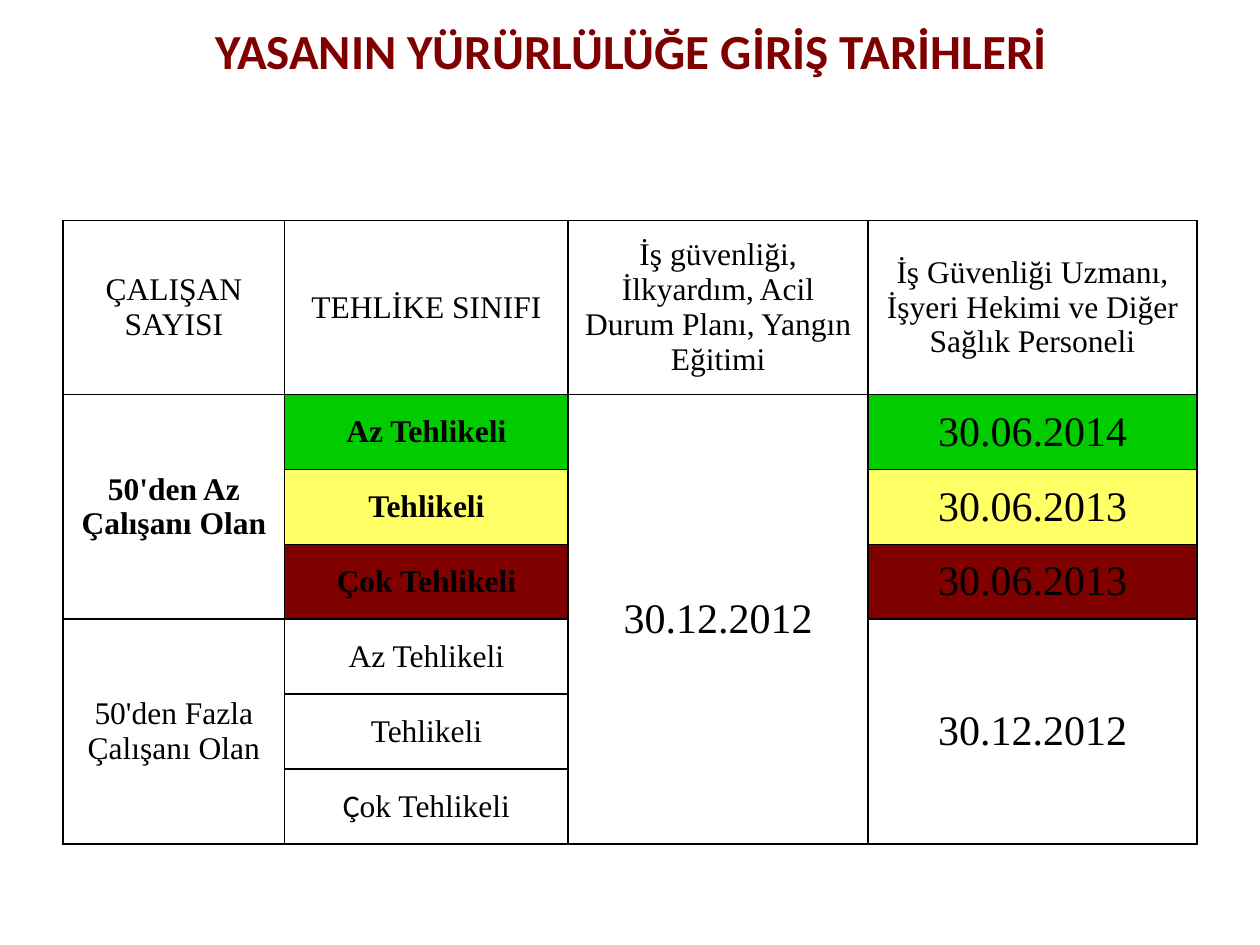
from lxml.etree import SubElement
from pptx import Presentation
from pptx.dml.color import RGBColor
from pptx.enum.text import MSO_ANCHOR, PP_ALIGN
from pptx.oxml.ns import qn
from pptx.util import Inches, Pt

COLORS = {"black": "000000", "maroon": "800000", "green": "00CC00", "yellow": "FFFF66"}
HEADING_FONT = "Calibri"
TABLE_FONT = "Times New Roman"
LABEL_SIZE, DATE_SIZE = 18, 24

TITLE = "YASANIN YÜRÜRLÜLÜĞE GİRİŞ TARİHLERİ"
HEADERS = [
    "ÇALIŞAN SAYISI",
    "TEHLİKE SINIFI",
    "İş güvenliği, İlkyardım, Acil Durum Planı, Yangın Eğitimi",
    "İş Güvenliği Uzmanı, İşyeri Hekimi ve Diğer Sağlık Personeli",
]
SMALL_WORKPLACES = "50'den Az Çalışanı Olan"
LARGE_WORKPLACES = "50'den Fazla Çalışanı Olan"
COMMON_DATE = "30.12.2012"
HAZARDS = [
    ("Az Tehlikeli", "30.06.2014", "green"),
    ("Tehlikeli", "30.06.2013", "yellow"),
    ("Çok Tehlikeli", "30.06.2013", "maroon"),
]
COLUMN_WIDTHS = [1.76, 2.25, 2.38, 2.61]
HEADER_HEIGHT, ROW_HEIGHT = 1.38, 0.595


def rgb(name):
    return RGBColor.from_string(COLORS[name])


def write(frame, runs, size, bold, color="black"):
    frame.word_wrap = True
    frame.vertical_anchor = MSO_ANCHOR.MIDDLE
    paragraph = frame.paragraphs[0]
    paragraph.alignment = PP_ALIGN.CENTER
    for text, font_name in runs:
        run = paragraph.add_run()
        run.text = text
        run.font.name = font_name
        run.font.size = Pt(size)
        run.font.bold = bold
        run.font.color.rgb = rgb(color)


def draw_borders(cell):
    properties = cell._tc.get_or_add_tcPr()
    for side in ("a:lnL", "a:lnR", "a:lnT", "a:lnB"):
        border = SubElement(properties, qn(side), w=str(Pt(1)))
        solid = SubElement(border, qn("a:solidFill"))
        SubElement(solid, qn("a:srgbClr"), val=COLORS["black"])


def fill_cell(row, column, text, size=LABEL_SIZE, bold=False, fill=None, span=1, runs=None):
    cell = schedule.cell(row, column)
    if span > 1:
        cell.merge(schedule.cell(row + span - 1, column))
    write(cell.text_frame, runs or [(text, TABLE_FONT)], size, bold)
    cell.vertical_anchor = MSO_ANCHOR.MIDDLE
    if fill:
        cell.fill.solid()
        cell.fill.fore_color.rgb = rgb(fill)


presentation = Presentation()
presentation.slide_width, presentation.slide_height = Inches(10), Inches(7.5)
slide = presentation.slides.add_slide(presentation.slide_layouts[6])

title = slide.shapes.add_textbox(Inches(0.51), Inches(0), Inches(9), Inches(0.79))
write(title.text_frame, [(TITLE, HEADING_FONT)], 28, True, "maroon")

group_size = len(HAZARDS)
body_rows = 2 * group_size
schedule = slide.shapes.add_table(
    body_rows + 1, len(HEADERS), Inches(0.5), Inches(1.75),
    Inches(sum(COLUMN_WIDTHS)), Inches(HEADER_HEIGHT + body_rows * ROW_HEIGHT),
).table
schedule.first_row = schedule.horz_banding = False
for column, width in zip(schedule.columns, COLUMN_WIDTHS):
    column.width = Inches(width)
for index, row in enumerate(schedule.rows):
    row.height = Inches(ROW_HEIGHT if index else HEADER_HEIGHT)
for cell in schedule.iter_cells():
    draw_borders(cell)
    cell.fill.background()

for column, header in enumerate(HEADERS):
    fill_cell(0, column, header)

large_start = 1 + group_size
fill_cell(1, 0, SMALL_WORKPLACES, bold=True, span=group_size)
fill_cell(large_start, 0, LARGE_WORKPLACES, span=group_size)
fill_cell(1, 2, COMMON_DATE, DATE_SIZE, span=body_rows)
fill_cell(large_start, 3, COMMON_DATE, DATE_SIZE, span=group_size)

for offset, (hazard, date, color) in enumerate(HAZARDS):
    fill_cell(1 + offset, 1, hazard, bold=True, fill=color)
    fill_cell(1 + offset, 3, date, DATE_SIZE, fill=color)
    split_initial = [(hazard[0], HEADING_FONT), (hazard[1:], TABLE_FONT)]
    is_last = offset == group_size - 1
    fill_cell(large_start + offset, 1, hazard, runs=split_initial if is_last else None)

presentation.save("out.pptx")
